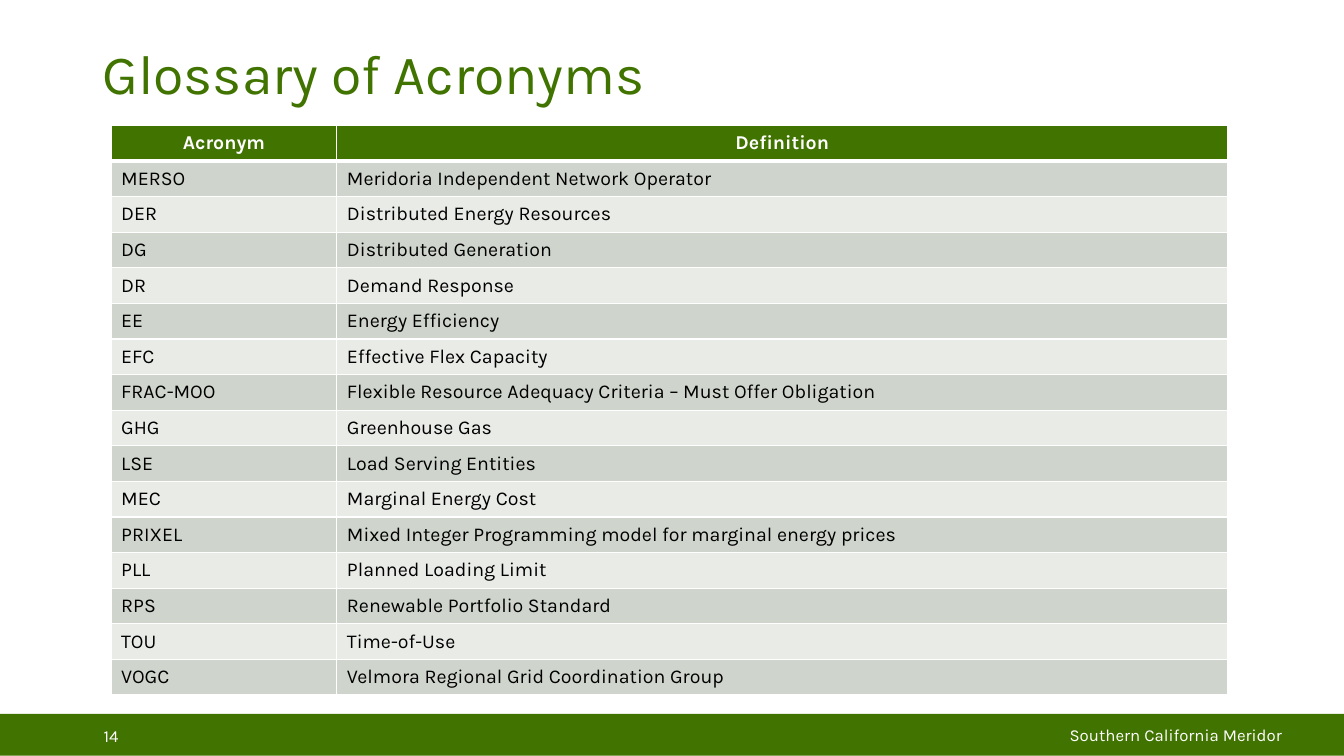
import pptx
import pptx.dml.color
import pptx.enum.shapes
import pptx.enum.text
import pptx.oxml
import pptx.oxml.ns
import pptx.util

Cm, Pt = pptx.util.Cm, pptx.util.Pt
ALIGN = pptx.enum.text.PP_ALIGN
MIDDLE = pptx.enum.text.MSO_ANCHOR.MIDDLE

TITLE = "Glossary of Acronyms"
COMPANY = "Southern California Meridor"
PAGE = "14"
HEADER = ("Acronym", "Definition")
GLOSSARY = [
    ("MERSO", "Meridoria Independent Network Operator"),
    ("DER", "Distributed Energy Resources"),
    ("DG", "Distributed Generation"),
    ("DR", "Demand Response"),
    ("EE", "Energy Efficiency"),
    ("EFC", "Effective Flex Capacity"),
    ("FRAC-MOO", "Flexible Resource Adequacy Criteria – Must Offer Obligation"),
    ("GHG", "Greenhouse Gas"),
    ("LSE", "Load Serving Entities"),
    ("MEC", "Marginal Energy Cost"),
    ("PRIXEL", "Mixed Integer Programming model for marginal energy prices"),
    ("PLL", "Planned Loading Limit"),
    ("RPS", "Renewable Portfolio Standard"),
    ("TOU", "Time-of-Use"),
    ("VOGC", "Velmora Regional Grid Coordination Group"),
]

GREEN, WHITE, BLACK = "417300", "FFFFFF", "000000"
BANDS = ("CFD5CC", "E9EBE7")
WIDTH, HEIGHT = 33.87, 19.05
TABLE_BOX = (2.8, 3.16, 28.14, 14.36)
ACRONYM_WIDTH = 5.69

TITLE_FONT = {"name": "Karla", "size": Pt(39.6)}
FOOTER_FONT = {"name": "Karla", "size": Pt(12)}
HEADER_FONT = {"name": "Karla", "size": Pt(14), "bold": True}
BODY_FONT = {"name": "Karla", "size": Pt(14), "bold": False}


def rgb(color):
    return pptx.dml.color.RGBColor.from_string(color)


def box(left, top, width, height):
    return Cm(left), Cm(top), Cm(width), Cm(height)


def write(tf, text, font, color, align=ALIGN.LEFT):
    p = tf.paragraphs[0]
    p.alignment = align
    r = p.add_run()
    r.text = text
    for name, value in font.items():
        setattr(r.font, name, value)
    r.font.color.rgb = rgb(color)
    return p


def add_text(s, place, *content):
    tf = s.shapes.add_textbox(*box(*place)).text_frame
    tf.word_wrap = True
    tf.vertical_anchor = MIDDLE
    return write(tf, *content)


def set_borders(cell, **points):
    """Give the cell white borders; points maps L, R, T, B to widths."""
    tcPr = cell._tc.get_or_add_tcPr()
    for side, width in points.items():
        tcPr.append(pptx.oxml.parse_xml(
            f'<a:ln{side} {pptx.oxml.ns.nsdecls("a")} w="{Pt(width)}">'
            f'<a:solidFill><a:srgbClr val="{WHITE}"/></a:solidFill></a:ln{side}>'))


def add_glossary(s):
    rows = [HEADER] + GLOSSARY
    table = s.shapes.add_table(len(rows), len(HEADER), *box(*TABLE_BOX)).table
    widths = (ACRONYM_WIDTH, TABLE_BOX[2] - ACRONYM_WIDTH)
    for column, width in zip(table.columns, widths):
        column.width = Cm(width)
    for i, texts in enumerate(rows):
        table.rows[i].height = Cm(TABLE_BOX[3] / len(rows))
        if i == 0:
            fill, style = GREEN, (HEADER_FONT, WHITE, ALIGN.CENTER)
        else:
            fill, style = BANDS[(i - 1) % 2], (BODY_FONT, BLACK)
        for j, text in enumerate(texts):
            cell = table.cell(i, j)
            cell.vertical_anchor = MIDDLE
            set_borders(cell, L=1, R=1, T=3 if i == 1 else 1, B=3 if i == 0 else 1)
            cell.fill.solid()
            cell.fill.fore_color.rgb = rgb(fill)
            write(cell.text_frame, text, *style)


def main():
    prs = pptx.Presentation()
    prs.slide_width, prs.slide_height = Cm(WIDTH), Cm(HEIGHT)
    s = prs.slides.add_slide(prs.slide_layouts[6])

    bar = s.shapes.add_shape(pptx.enum.shapes.MSO_SHAPE.RECTANGLE,
                             *box(0, 17.99, WIDTH, 1.05))
    bar.shadow.inherit = False
    bar.fill.solid()
    bar.fill.fore_color.rgb = rgb(GREEN)
    bar.line.fill.background()

    title = add_text(s, (2.33, 1.02, 29.21, 1.83), TITLE, TITLE_FONT, GREEN)
    title.line_spacing = 0.9
    add_text(s, (25.4, 18.01, 8.47, 1.02), COMPANY, FOOTER_FONT, WHITE, ALIGN.CENTER)
    add_text(s, (0, 18.04, 5.6, 1.02), PAGE, FOOTER_FONT, WHITE, ALIGN.CENTER)
    add_glossary(s)
    prs.save("out.pptx")


if __name__ == "__main__":
    main()
